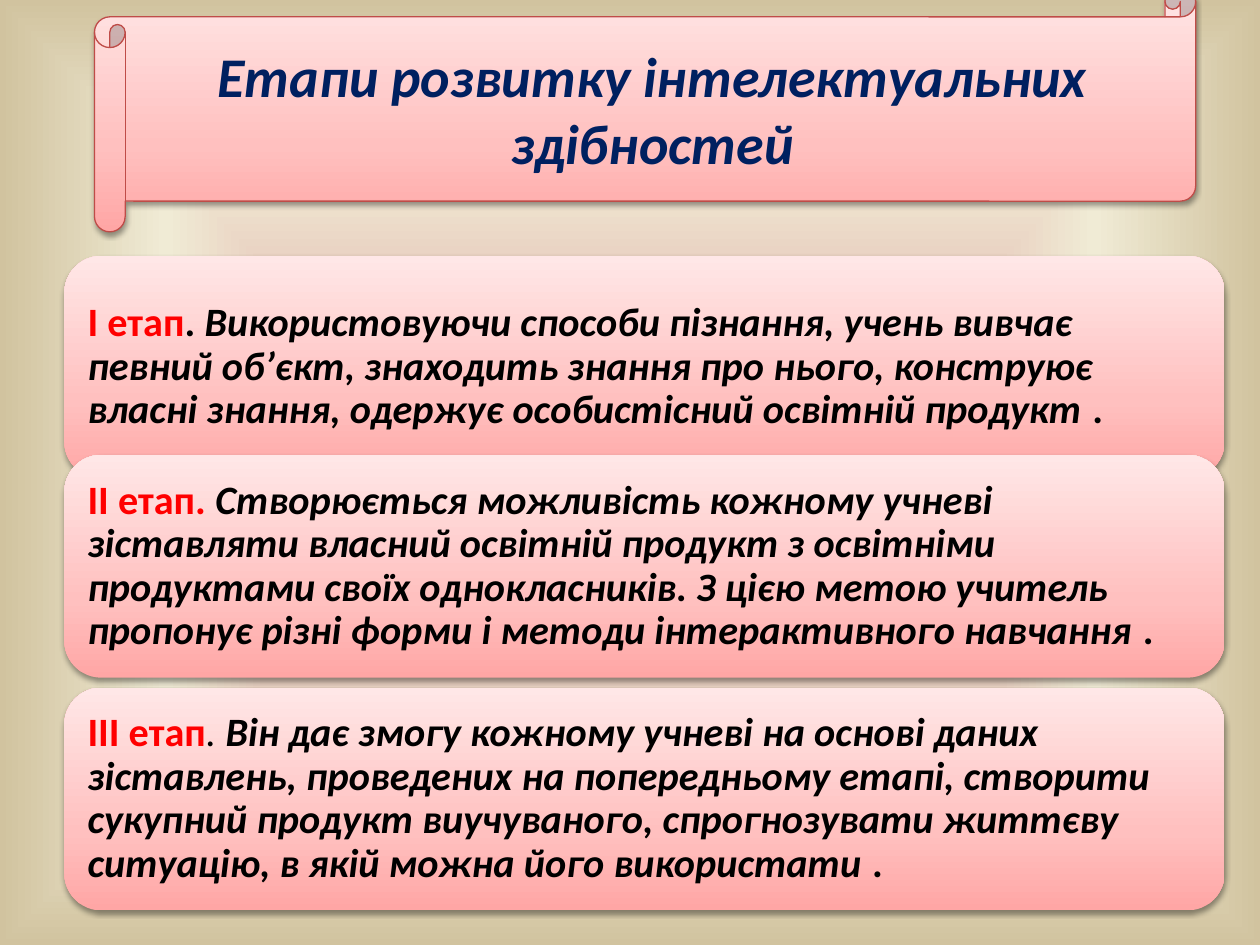
"""Build the slide on the stages of developing intellectual abilities."""
from lxml import etree
from pptx import Presentation
from pptx.dml.color import RGBColor
from pptx.enum.shapes import MSO_SHAPE
from pptx.enum.text import MSO_ANCHOR, PP_ALIGN
from pptx.oxml import parse_xml
from pptx.oxml.ns import nsdecls, qn
from pptx.util import Pt

SCROLL, ROUNDED = MSO_SHAPE.HORIZONTAL_SCROLL, MSO_SHAPE.ROUNDED_RECTANGLE
MIDDLE, LEFT, CENTER = MSO_ANCHOR.MIDDLE, PP_ALIGN.LEFT, PP_ALIGN.CENTER

RED = RGBColor(0xFF, 0x00, 0x00)
BLACK = RGBColor(0x00, 0x00, 0x00)
NAVY = RGBColor(0x00, 0x20, 0x60)
BORDER = RGBColor(0xBF, 0x4C, 0x48)
PINK_STOPS = [
    (0, RGBColor(0xFF, 0xA6, 0xA5)),
    (35, RGBColor(0xFF, 0xC0, 0xBF)),
    (100, RGBColor(0xFF, 0xE7, 0xE7)),
]
BACK_STOPS = [
    (0, RGBColor(0xD9, 0x96, 0x94)),
    (65, RGBColor(0xF0, 0xEB, 0xD5)),
    (100, RGBColor(0xD1, 0xC3, 0x9F)),
]
UPWARD = f'<a:lin {nsdecls("a")} ang="16200000" scaled="0"/>'
FROM_CENTER = (
    f'<a:path {nsdecls("a")} path="shape">'
    '<a:fillToRect l="50000" t="50000" r="50000" b="50000"/></a:path>'
)
SHADOW = (
    f'<a:outerShdw {nsdecls("a")} blurRad="40000" dist="20000" dir="5400000" '
    'rotWithShape="0"><a:srgbClr val="000000"><a:alpha val="38000"/>'
    '</a:srgbClr></a:outerShdw>'
)

LABEL = {"size": Pt(23), "bold": True, "italic": False, "color": RED}
PLAIN = {**LABEL, "color": BLACK}
BODY = {**PLAIN, "italic": True}
LIGHT = {**BODY, "bold": False}
TITLE = {"size": Pt(32), "bold": True, "italic": True, "color": NAVY}

TITLE_BOX = (54, -7.9, 629.3, 140.4)
TITLE_RUNS = [("Етапи розвитку інтелектуальних здібностей", TITLE)]
STAGE_LEFT, STAGE_WIDTH, STAGE_HEIGHT = 36.7, 663.1, 127.4
STAGES = [
    (146.2, [
        ("I етап", LABEL),
        (". ", PLAIN),
        ("Використовуючи способи пізнання, учень вивчає певний об’єкт, "
         "знаходить знання про нього, конструює власні знання, одержує "
         "особистісний освітній продукт", BODY),
        (" .", PLAIN),
    ]),
    (259.9, [
        ("II етап. ", LABEL),
        ("Створюється можливість кожному учневі зіставляти власний освітній "
         "продукт з освітніми продуктами своїх однокласників. З цією метою "
         "учитель пропонує різні форми і методи інтерактивного навчання", BODY),
        (" .", PLAIN),
    ]),
    (392.9, [
        ("III етап", LABEL),
        (". ", LIGHT),
        ("Він дає змогу кожному учневі на основі даних зіставлень, проведених "
         "на попередньому етапі, створити сукупний продукт виучуваного, "
         "спрогнозувати життєву ситуацію, в якій можна його використати", BODY),
        (" .", PLAIN),
    ]),
]


def set_gradient(fill, element, stops, direction):
    fill.gradient()
    grad = element.find(".//" + qn("a:gradFill"))
    for child in list(grad):
        grad.remove(child)
    gs_list = etree.SubElement(grad, qn("a:gsLst"))
    for position, color in stops:
        gs = etree.SubElement(gs_list, qn("a:gs"), pos=str(position * 1000))
        etree.SubElement(gs, qn("a:srgbClr"), val=str(color))
    grad.append(parse_xml(direction))


def add_panel(s, kind, box, runs, align, margins, spacing):
    sp = s.shapes.add_shape(kind, *(Pt(v) for v in box))
    set_gradient(sp.fill, sp._element, PINK_STOPS, UPWARD)
    sp.line.fill.background()
    sp.shadow.inherit = False
    sp._element.spPr.find(qn("a:effectLst")).append(parse_xml(SHADOW))
    tf = sp.text_frame
    tf.word_wrap = True
    tf.vertical_anchor = MIDDLE
    for side, margin in margins.items():
        setattr(tf, "margin_" + side, Pt(margin))
    p = tf.paragraphs[0]
    p.alignment = align
    p.line_spacing = spacing
    for text, style in runs:
        r = p.add_run()
        r.text = text
        r.font.name = "Calibri"
        for name, value in style.items():
            if name == "color":
                r.font.color.rgb = value
            else:
                setattr(r.font, name, value)
    return sp


def main():
    prs = Presentation()
    prs.slide_width, prs.slide_height = Pt(720), Pt(540)
    s = prs.slides.add_slide(prs.slide_layouts[6])
    set_gradient(s.background.fill, s._element, BACK_STOPS, FROM_CENTER)
    stage_margins = dict.fromkeys(("left", "top", "right", "bottom"), 7.2)
    for top, runs in STAGES:
        box = (STAGE_LEFT, top, STAGE_WIDTH, STAGE_HEIGHT)
        add_panel(s, ROUNDED, box, runs, LEFT, stage_margins, 0.9)
    title = add_panel(s, SCROLL, TITLE_BOX, TITLE_RUNS, CENTER, {}, 1.0)
    title.line.color.rgb = BORDER
    title.line.width = Pt(0.75)
    prs.save("out.pptx")


if __name__ == "__main__":
    main()
